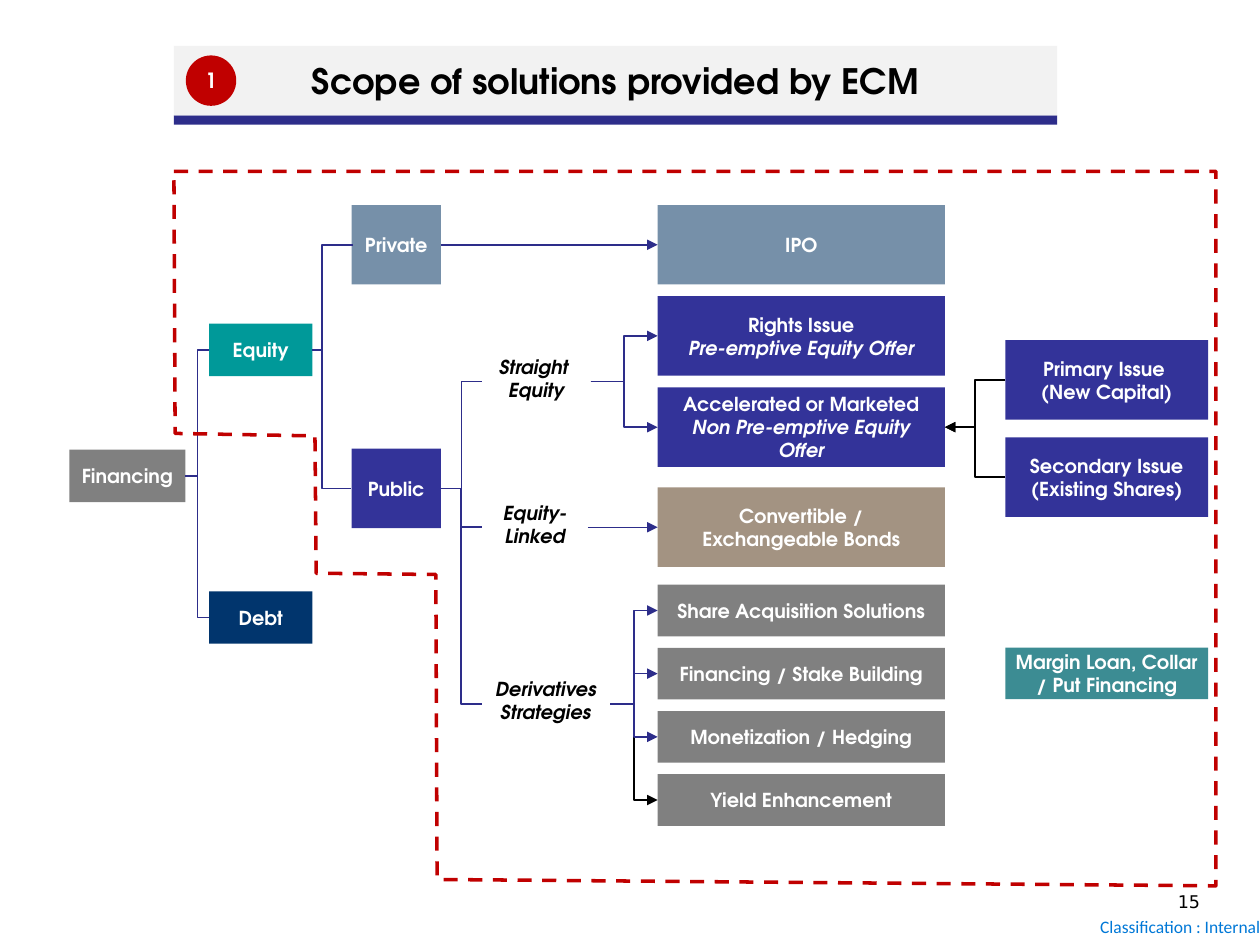
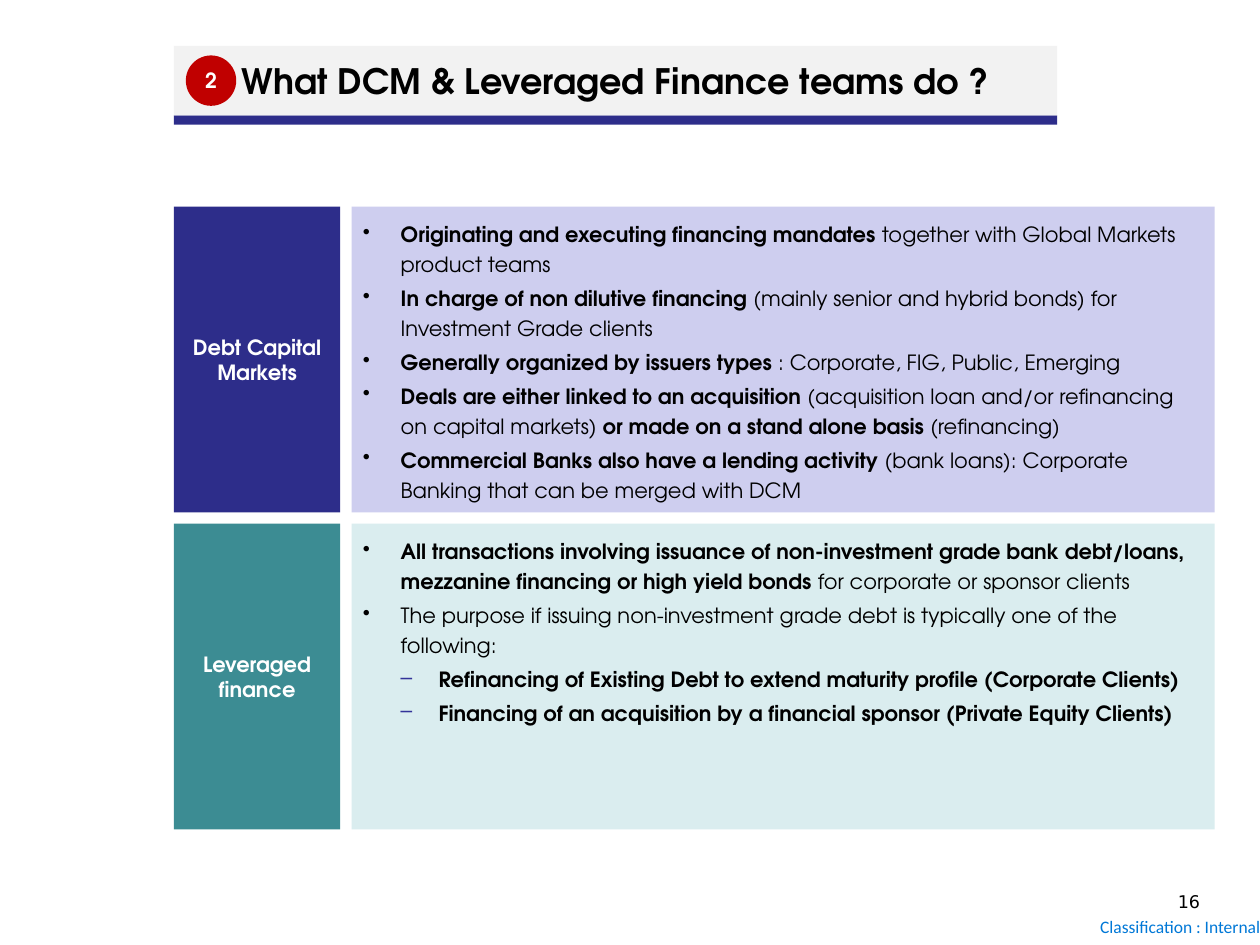
from dataclasses import dataclass

import pptx
import pptx.dml.color
import pptx.enum.dml
import pptx.enum.shapes
import pptx.enum.text
import pptx.oxml.ns
import pptx.util

COLOURS = {
    "white": "FFFFFF", "black": "000000", "navy": "2D2D8A", "indigo": "333399",
    "steel": "7690A9", "sand": "A39382", "grey": "808080", "midnight": "01356D",
    "green": "009999", "teal": "3C8C93", "red": "C00000", "pale grey": "F2F2F2",
    "lavender": "CECEEF", "pale teal": "DAEDEF", "azure": "0078D7",
}
FONT = "TeX Gyre Adventor"
TITLE_LEFT, TITLE_WIDTH = 99.4, 504.7
Pt = pptx.util.Pt
ALIGN = pptx.enum.text.PP_ALIGN
ANCHOR = pptx.enum.text.MSO_ANCHOR
SHAPE = pptx.enum.shapes.MSO_SHAPE
CONNECTOR = pptx.enum.shapes.MSO_CONNECTOR


@dataclass
class Node:
    """A box of the tree; one without a fill is a plain italic label."""
    text: str
    left: float
    top: float
    width: float
    height: float
    fill: str = ""
    wrap: bool = True
    italic_from: int = 9  # index of the first italic paragraph

    @property
    def middle(self) -> float:
        return self.top + self.height / 2


@dataclass
class Link:
    source: str
    target: str
    colour: str = "navy"
    weight: float = 1
    arrow: bool = True


@dataclass
class Bullet:
    """Phrases that alternate between bold and regular."""
    phrases: tuple
    starts_bold: bool = True
    level: int = 0


@dataclass
class Team:
    name: str
    fill: str
    tint: str
    bullets: list


def rgb(name: str):
    return pptx.dml.color.RGBColor.from_string(COLOURS[name])


def add_element(parent, tag: str, **attributes):
    element = parent.makeelement(pptx.oxml.ns.qn(tag), attributes)
    parent.append(element)
    return element


def set_font(font, size: float, colour: str, bold: bool = True, name: str = FONT) -> None:
    font.name, font.size, font.bold = name, Pt(size), bold
    font.color.rgb = rgb(colour)


def set_frame(frame, inset_x: float, inset_y: float, anchor, wrap: bool = True) -> None:
    frame.margin_left = frame.margin_right = Pt(inset_x)
    frame.margin_top = frame.margin_bottom = Pt(inset_y)
    frame.vertical_anchor, frame.word_wrap = anchor, wrap


def fill_text(frame, text: str, align, size: float, colour: str, bold: bool = True,
              name: str = FONT) -> None:
    frame.text = text
    for para in frame.paragraphs:
        para.alignment = align
        for span in para.runs:
            set_font(span.font, size, colour, bold, name)


def add_block(page, kind, left: float, top: float, width: float, height: float, fill: str):
    block = page.shapes.add_shape(kind, Pt(left), Pt(top), Pt(width), Pt(height))
    block.shadow.inherit = False
    block.fill.solid()
    block.fill.fore_color.rgb = rgb(fill)
    block.line.fill.background()
    return block


def add_label(page, left: float, top: float, width: float, height: float):
    return page.shapes.add_textbox(Pt(left), Pt(top), Pt(width), Pt(height))


def add_shared_shapes(page) -> None:
    """Put the title rule and the classification footer on the page's layout."""
    rule = add_block(page, SHAPE.RECTANGLE, TITLE_LEFT, 66, TITLE_WIDTH, 5.2, "navy")
    footer = add_label(page, 604.8, 519.1, 115.2, 20.9)
    set_frame(footer.text_frame, 0, 0, ANCHOR.MIDDLE)
    fill_text(footer.text_frame, "Classification : Internal", ALIGN.RIGHT, 10, "azure",
              False, "Calibri")
    for shape in (rule, footer):
        page.slide_layout.shapes.element.append(shape.element)


def add_page(deck, title: str, section: int, number: int):
    page = deck.slides.add_slide(deck.slide_layouts.get_by_name("Title Only"))
    heading = page.shapes.title
    heading.left, heading.top = Pt(TITLE_LEFT), Pt(26.2)
    heading.width, heading.height = Pt(TITLE_WIDTH), Pt(39.8)
    heading.fill.solid()
    heading.fill.fore_color.rgb = rgb("pale grey")
    set_frame(heading.text_frame, 7.2, 3.6, ANCHOR.MIDDLE)
    heading.text_frame.auto_size = pptx.enum.text.MSO_AUTO_SIZE.NONE
    fill_text(heading.text_frame, title, ALIGN.CENTER, 20, "black")

    badge = add_block(page, SHAPE.OVAL, 106.2, 31.7, 28.8, 28.8, "red")
    set_frame(badge.text_frame, 2.9, 2.9, ANCHOR.MIDDLE, wrap=False)
    fill_text(badge.text_frame, str(section), ALIGN.CENTER, 12, "white")

    page_number = add_label(page, 666, 505.4, 28, 22.3)
    set_frame(page_number.text_frame, 7.2, 3.6, ANCHOR.TOP)
    fill_text(page_number.text_frame, str(number), ALIGN.LEFT, 10, "black", False, "DejaVu Sans")
    return page


def add_node(page, node: Node) -> None:
    place = (node.left, node.top, node.width, node.height)
    if node.fill:
        box = add_block(page, SHAPE.RECTANGLE, *place, node.fill)
    else:
        box = add_label(page, *place)
    set_frame(box.text_frame, 6.5, 2.9, ANCHOR.MIDDLE if node.fill else ANCHOR.TOP, node.wrap)
    fill_text(box.text_frame, node.text, ALIGN.CENTER, 11, "white" if node.fill else "black")
    for para in box.text_frame.paragraphs[node.italic_from if node.fill else 0:]:
        for span in para.runs:
            span.font.italic = True


def add_line(page, kind, start: tuple, end: tuple, colour: str, weight: float, arrow: bool) -> None:
    line = page.shapes.add_connector(kind, *(Pt(value) for value in start + end))
    line.line.color.rgb = rgb(colour)
    line.line.width = Pt(weight)
    properties = line.element.spPr
    if arrow:
        add_element(properties.find(pptx.oxml.ns.qn("a:ln")), "a:tailEnd", type="triangle")
    add_element(properties, "a:effectLst")


def add_link(page, link: Link) -> None:
    """Join the facing sides of two nodes, with an elbow where heights differ."""
    source, target = NODES[link.source], NODES[link.target]
    if source.left < target.left:
        start_x, end_x = source.left + source.width, target.left
    else:
        start_x, end_x = source.left, target.left + target.width
    level = abs(source.middle - target.middle) < 0.1
    kind = CONNECTOR.STRAIGHT if level else CONNECTOR.ELBOW
    add_line(page, kind, (start_x, source.middle), (end_x, target.middle),
             link.colour, link.weight, link.arrow)


def add_outline(page, points: list, colour: str, weight: float, close: bool):
    corners = [(Pt(x), Pt(y)) for x, y in points]
    builder = page.shapes.build_freeform(*corners[0])
    builder.add_line_segments(corners[1:], close=close)
    outline = builder.convert_to_shape()
    outline.shadow.inherit = False
    outline.fill.background()
    outline.line.color.rgb = rgb(colour)
    outline.line.width = Pt(weight)
    return outline


def add_bullet(para, bullet: Bullet) -> None:
    properties = para._p.get_or_add_pPr()
    properties.set("marL", str(Pt(21.6 * (bullet.level + 1))))
    properties.set("indent", str(-Pt(21.6)))
    if bullet.level:
        add_element(add_element(properties, "a:buClr"), "a:srgbClr", val=COLOURS["indigo"])
    add_element(properties, "a:buChar", char="–" if bullet.level else "•")
    para.level = bullet.level
    para.alignment = ALIGN.LEFT
    para.line_spacing = 1.2
    para.space_after = Pt(1)
    for index, phrase in enumerate(bullet.phrases):
        span = para.add_run()
        span.text = phrase
        set_font(span.font, 12, "black", bullet.starts_bold == (index % 2 == 0))


def add_team(page, team: Team, top: float, height: float) -> None:
    name_box = add_block(page, SHAPE.RECTANGLE, TITLE_LEFT, top, 95, height, team.fill)
    set_frame(name_box.text_frame, 6.5, 6.5, ANCHOR.MIDDLE)
    fill_text(name_box.text_frame, team.name, ALIGN.CENTER, 12, "white")
    body = add_block(page, SHAPE.RECTANGLE, 200.9, top, 493.2, height, team.tint)
    frame = body.text_frame
    set_frame(frame, 6.5, 5.8, ANCHOR.TOP)
    for index, bullet in enumerate(team.bullets):
        para = frame.add_paragraph() if index else frame.paragraphs[0]
        if index:
            para.space_before = Pt(1)
        add_bullet(para, bullet)


def solution(text: str, top: float, fill: str, height: float = 45.4) -> Node:
    return Node(text, 375.8, top, 164.2, height, fill, italic_from=1)


STRATEGIES = ["Share Acquisition Solutions", "Financing / Stake Building",
              "Monetization / Hedging", "Yield Enhancement"]
NODES = {
    "financing": Node("Financing", 39.6, 257, 66.4, 30, "grey"),
    "equity": Node("Equity", 119.5, 185, 59, 30, "green"),
    "debt": Node("Debt", 119.5, 337.9, 59, 30, "midnight", wrap=False),
    "private": Node("Private", 200.9, 117.2, 51.1, 45.4, "steel"),
    "public": Node("Public", 200.9, 256.4, 51.1, 45.4, "indigo"),
    "straight": Node("Straight \vEquity", 275.5, 200, 62, 36),
    "linked": Node("Equity-\nLinked", 275.5, 283.3, 60.5, 36),
    "derivatives": Node("Derivatives Strategies", 275.2, 384.2, 73.4, 36),
    "ipo": solution("IPO", 117.2, "steel"),
    "rights": solution("Rights Issue\nPre-emptive Equity Offer", 169.3, "indigo"),
    "accelerated": solution("Accelerated or Marketed\nNon Pre-emptive Equity Offer", 221.4, "indigo"),
    "convertible": solution("Convertible /\vExchangeable Bonds", 278.6, "sand"),
    "primary": Node("Primary Issue \v(New Capital)", 574.5, 194.4, 115.9, 45.4, "indigo"),
    "secondary": Node("Secondary Issue (Existing Shares)", 574.5, 250, 115.9, 45.4, "indigo"),
    "margin": Node("Margin Loan, Collar\v/ Put Financing", 574.5, 370, 115.9, 29.5, "teal", wrap=False),
    **{name: solution(name, 334.1 + 36.1 * row, "grey", 29.5)
       for row, name in enumerate(STRATEGIES)},
}
LINKS = [
    Link("financing", "equity", weight=0.75, arrow=False),
    Link("financing", "debt", weight=0.75, arrow=False),
    Link("private", "ipo"),
    *(Link("public", label, arrow=False) for label in ("straight", "linked", "derivatives")),
    Link("straight", "rights"),
    Link("straight", "accelerated"),
    Link("linked", "convertible", weight=0.75),
    Link("derivatives", STRATEGIES[-1], "black"),
    *(Link("derivatives", name) for name in STRATEGIES[:-1]),
    *(Link(issue, "accelerated", "black") for issue in ("primary", "secondary")),
]
ECM_BOUNDARY = [(99.4, 97.9), (694.8, 97.9), (694.8, 506.2), (249.8, 502.6),
                (249.1, 328.3), (180.7, 327.6), (180, 249.1), (100.1, 247.7)]
TEAMS = [
    Team("Debt Capital Markets", "navy", "lavender", [
        Bullet(("Originating and executing financing mandates ",
                "together with Global Markets product teams")),
        Bullet(("In charge of non dilutive financing ",
                "(mainly senior and hybrid bonds) for Investment Grade clients")),
        Bullet(("Generally organized by issuers types ", ": Corporate, FIG, Public, Emerging")),
        Bullet(("Deals are either linked to an acquisition ",
                "(acquisition loan and/or refinancing on capital markets) ",
                "or made on a stand alone basis ", "(refinancing)")),
        Bullet(("Commercial Banks also have a lending activity ",
                "(bank loans): Corporate Banking that can be merged with DCM")),
    ]),
    Team("Leveraged finance", "teal", "pale teal", [
        Bullet(("All transactions involving issuance of non-investment grade bank debt/loans, "
                "mezzanine financing or high yield bonds ", "for corporate or sponsor clients")),
        Bullet(("The purpose if issuing non-investment grade debt is typically one of the "
                "following:",), starts_bold=False),
        Bullet(("Refinancing of Existing Debt to extend maturity profile (Corporate Clients)",),
               level=1),
        Bullet(("Financing of an acquisition by a financial sponsor (Private Equity Clients)",),
               level=1),
    ]),
]


def draw_scope(page) -> None:
    for node in NODES.values():
        add_node(page, node)
    for link in LINKS:
        add_link(page, link)
    equity, private, public = (NODES[name] for name in ("equity", "private", "public"))
    bracket_x = 184.2
    add_outline(page, [(private.left + 1, private.middle), (bracket_x, private.middle),
                       (bracket_x, public.middle), (public.left, public.middle)],
                "navy", 1, close=False)
    add_line(page, CONNECTOR.STRAIGHT, (equity.left + equity.width, equity.middle),
             (bracket_x, equity.middle), "navy", 0.75, arrow=False)
    boundary = add_outline(page, ECM_BOUNDARY, "red", 2, close=True)
    boundary.line.dash_style = pptx.enum.dml.MSO_LINE.DASH


def main() -> None:
    deck = pptx.Presentation()
    deck.slide_width, deck.slide_height = Pt(720), Pt(540)
    scope_page = add_page(deck, "Scope of solutions provided by ECM", 1, 15)
    add_shared_shapes(scope_page)
    draw_scope(scope_page)
    teams_page = add_page(deck, "What DCM & Leveraged Finance teams do ?", 2, 16)
    for row, team in enumerate(TEAMS):
        add_team(teams_page, team, 118 + 181.2 * row, 174.8)
    deck.save("out.pptx")


if __name__ == "__main__":
    main()
